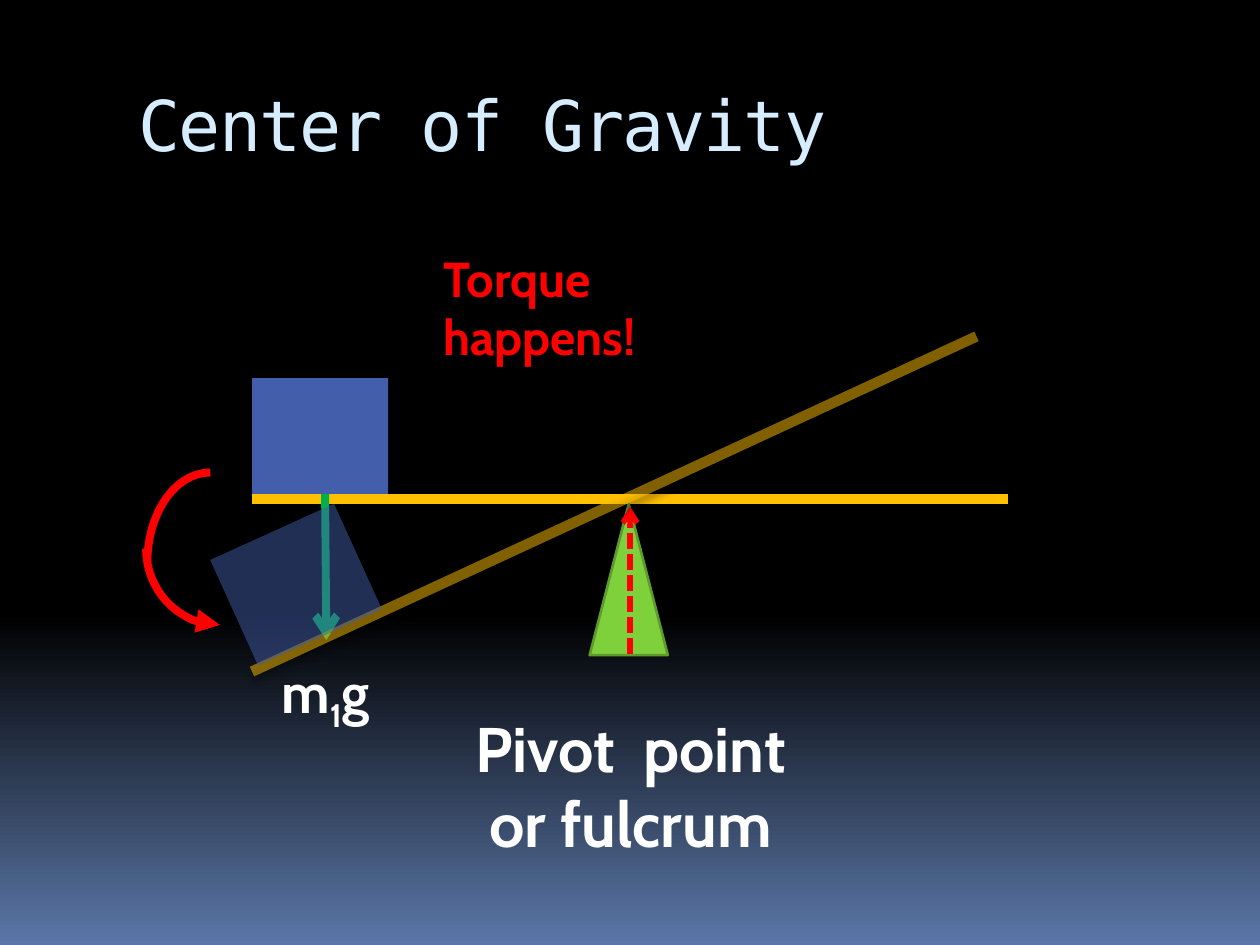
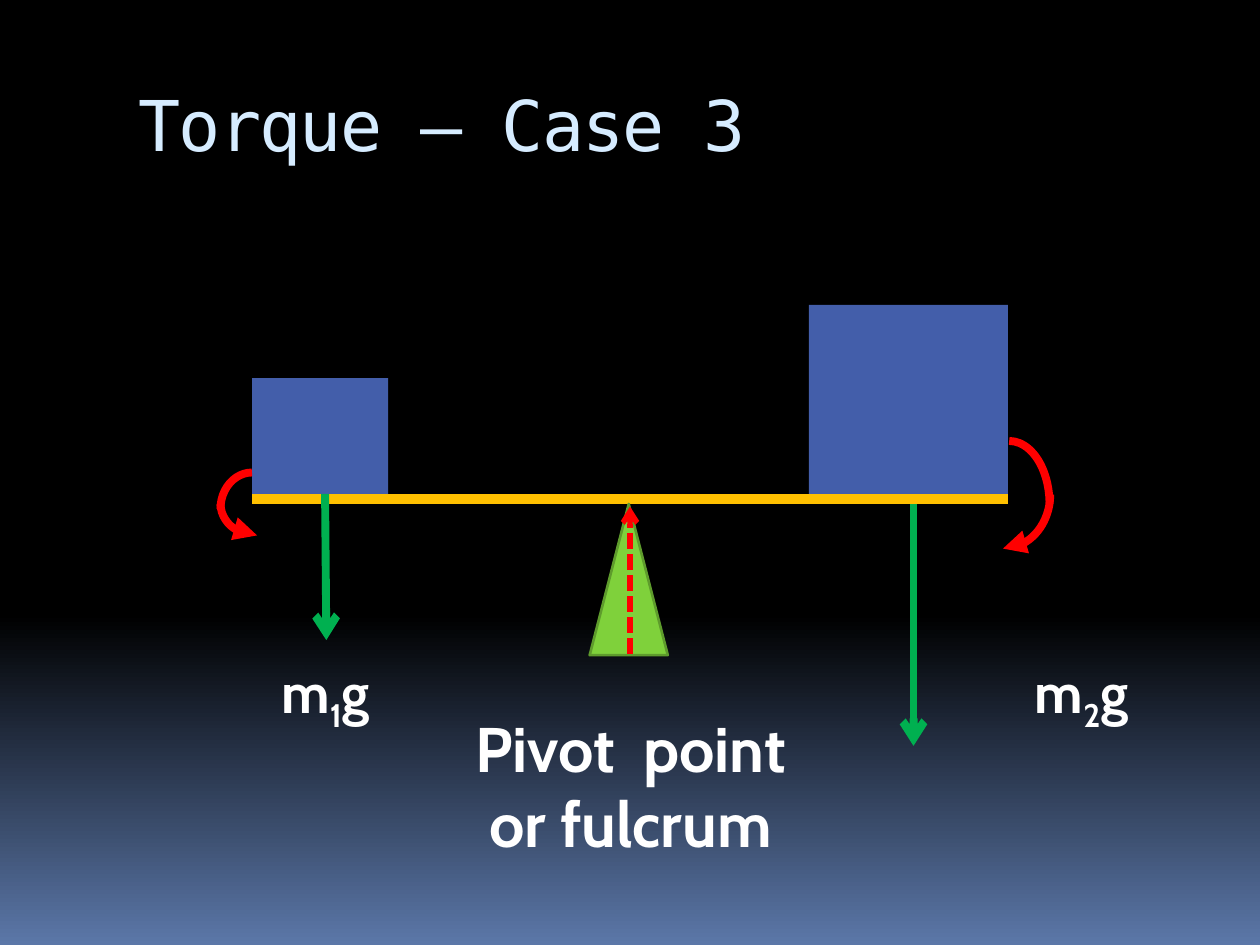
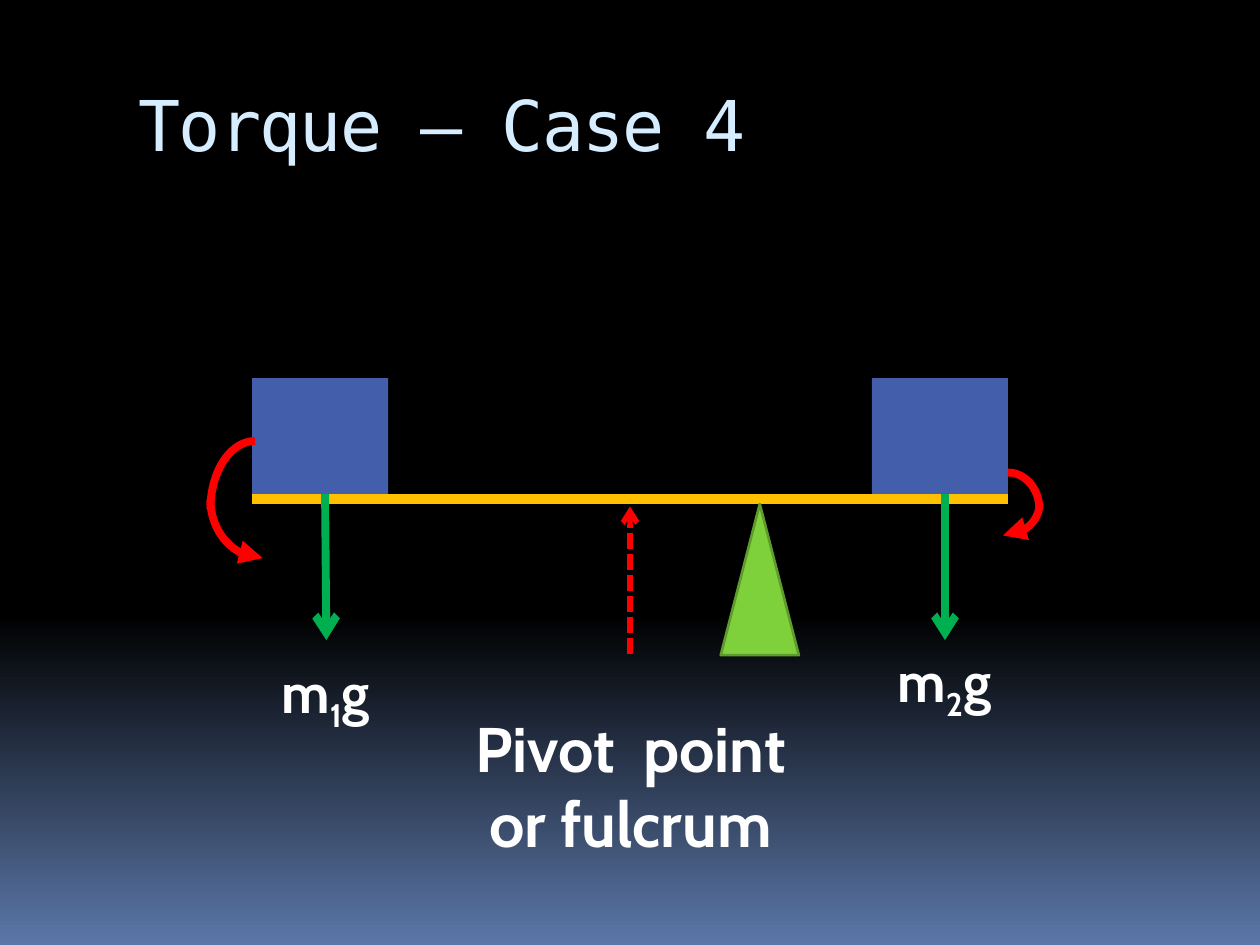
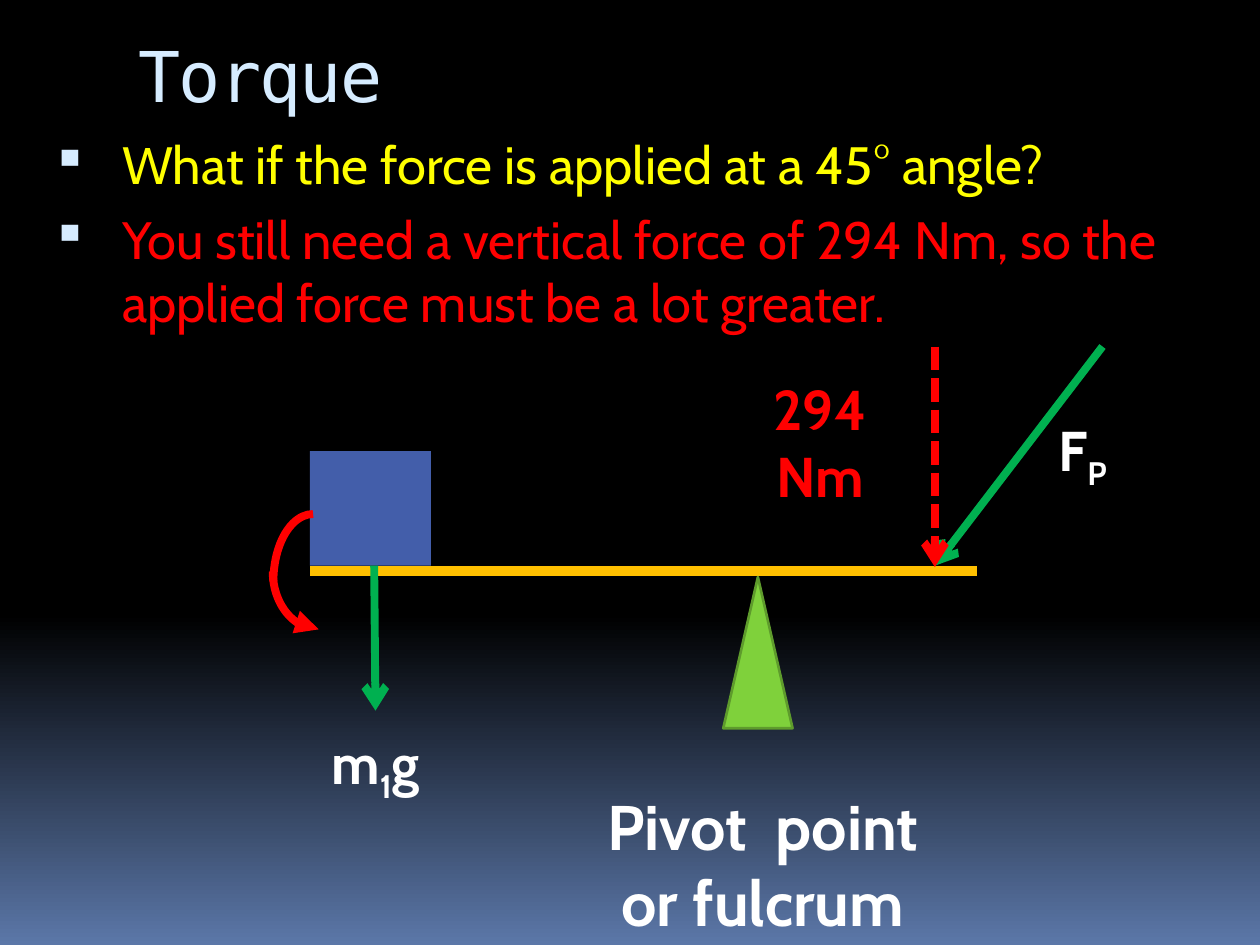
import pptx
import pptx.dml.color
import pptx.enum.dml
import pptx.enum.shapes
import pptx.enum.text
import pptx.oxml
import pptx.oxml.ns
import pptx.util
from pptx.dml.color import RGBColor
from pptx.enum.shapes import MSO_SHAPE
from pptx.util import Inches, Pt

# Shared style
BLACK = RGBColor(0x00, 0x00, 0x00)
DUSK_BLUE = RGBColor(0x5B, 0x77, 0xA8)
TITLE_BLUE = RGBColor(0xD6, 0xEC, 0xFF)
BLOCK_BLUE = RGBColor(0x43, 0x5E, 0xAA)
BOARD_GOLD = RGBColor(0xFF, 0xC0, 0x00)
FORCE_GREEN = RGBColor(0x00, 0xB0, 0x50)
FULCRUM_GREEN = RGBColor(0x7F, 0xD1, 0x3B)
FULCRUM_EDGE = RGBColor(0x5E, 0x9B, 0x2C)
RED = RGBColor(0xFF, 0x00, 0x00)
YELLOW = RGBColor(0xFF, 0xFF, 0x00)
WHITE = RGBColor(0xFF, 0xFF, 0xFF)

TITLE_FONT = "DejaVu Sans Mono"
TEXT_FONT = "Cabin"
BLOCK_SIZE = (1.08, 0.92)
BOARD_TOP = 3.92


# XML helpers
def add_xml(parent, tag, **attributes):
    element = pptx.oxml.parse_xml(f"<a:{tag} {pptx.oxml.ns.nsdecls('a')}/>")
    for name, value in attributes.items():
        element.set(name, str(value))
    parent.append(element)
    return element


def set_alpha(fill_owner, percent):
    for color in fill_owner.iter(pptx.oxml.ns.qn("a:srgbClr")):
        add_xml(color, "alpha", val=percent * 1000)


def add_arrowhead(line, kind):
    add_xml(line._get_or_add_ln(), "tailEnd", type=kind)


# Text
def set_font(paragraph, name, size, color, bold=False):
    font = paragraph.font
    font.name, font.size, font.bold = name, Pt(size), bold
    font.color.rgb = color


def add_text_frame(slide, left, top, width, height):
    box = slide.shapes.add_textbox(Inches(left), Inches(top), Inches(width), Inches(height))
    box.text_frame.word_wrap = True
    return box.text_frame


def add_title(slide, text, top=0.56, height=1):
    frame = add_text_frame(slide, 1, top, 8.5, height)
    frame.margin_top = Inches(0.09)
    paragraph = frame.paragraphs[0]
    run = paragraph.add_run()
    run.text = text
    run._r.get_or_add_rPr().set("spc", "-100")
    set_font(paragraph, TITLE_FONT, 40, TITLE_BLUE)


def add_label(slide, text, left, top, width, height, size=32, color=WHITE, centered=True):
    """Bold label; underscores set off a subscript, as in m_1_g."""
    frame = add_text_frame(slide, left, top, width, height)
    frame.auto_size = pptx.enum.text.MSO_AUTO_SIZE.SHAPE_TO_FIT_TEXT
    paragraph = frame.paragraphs[0]
    if centered:
        paragraph.alignment = pptx.enum.text.PP_ALIGN.CENTER
    for index, part in enumerate(text.split("_")):
        if part:
            run = paragraph.add_run()
            run.text = part
            if index % 2:
                run._r.get_or_add_rPr().set("baseline", "-25000")
    set_font(paragraph, TEXT_FONT, size, color, bold=True)


def add_weight_label(slide, number, left, top, width=1.33):
    add_label(slide, f"m_{number}_g", left, top, width, 0.64)


def add_pivot_label(slide, left=3.42, top=5.58, width=3.17):
    add_label(slide, "Pivot  point or fulcrum", left, top, width, 1.31, size=36)


def add_bullets(slide, items, left, top, width, height):
    frame = add_text_frame(slide, left, top, width, height)
    for index, (text, color) in enumerate(items):
        paragraph = frame.add_paragraph() if index else frame.paragraphs[0]
        paragraph.text = text
        paragraph.space_before = Pt(7)
        set_font(paragraph, TEXT_FONT, 30, color)
        properties = paragraph._p.get_or_add_pPr()
        properties.set("marL", str(Inches(0.7)))
        properties.set("indent", str(-Inches(0.56)))
        default_font = properties.find(pptx.oxml.ns.qn("a:defRPr"))
        bullet_color = add_xml(properties, "buClr")
        add_xml(bullet_color, "srgbClr", val=TITLE_BLUE)
        add_xml(properties, "buSzPct", val=95000)
        add_xml(properties, "buChar", char="▪")
        properties.append(default_font)


# Drawing
def add_line(slide, start, end, color, width, arrow=False, dashed=False):
    connector = slide.shapes.add_connector(
        pptx.enum.shapes.MSO_CONNECTOR.STRAIGHT,
        *(Inches(value) for value in (*start, *end)))
    connector.line.color.rgb = color
    connector.line.width = Pt(width)
    if dashed:
        connector.line.dash_style = pptx.enum.dml.MSO_LINE.SQUARE_DOT
    if arrow:
        add_arrowhead(connector.line, "arrow")
    add_xml(connector._element.spPr, "effectLst")
    return connector


def add_shape(slide, kind, left, top, width, height, fill=None, line=None, line_width=1.5):
    shape = slide.shapes.add_shape(
        kind, Inches(left), Inches(top), Inches(width), Inches(height))
    shape.shadow.inherit = False
    if fill is None:
        shape.fill.background()
    else:
        shape.fill.solid()
        shape.fill.fore_color.rgb = fill
    if line is None:
        shape.line.fill.background()
    else:
        shape.line.color.rgb = line
        shape.line.width = Pt(line_width)
    return shape


def add_block(slide, left, size=BLOCK_SIZE, bottom=BOARD_TOP):
    width, height = size
    return add_shape(slide, MSO_SHAPE.RECTANGLE, left, bottom - height, width, height, BLOCK_BLUE)


def add_board(slide, left=2, right=8, y=3.96):
    add_line(slide, (left, y), (right, y), BOARD_GOLD, 6)


def add_fulcrum(slide, left, top=4, width=0.62):
    add_shape(slide, MSO_SHAPE.ISOSCELES_TRIANGLE, left, top, width, 1.2,
              FULCRUM_GREEN, FULCRUM_EDGE)


def add_force(slide, start, end):
    add_line(slide, start, end, FORCE_GREEN, 4.5, arrow=True)


def add_turn(slide, lower, upper, clockwise=False):
    """Curved torque arrow: a lower quarter with the head, then an upper quarter."""
    for box, rotation in ((lower, 90 if clockwise else 270), (upper, 0)):
        arc = add_shape(slide, MSO_SHAPE.ARC, *box, line=RED, line_width=4.5)
        arc.rotation = rotation
        if not clockwise:
            arc._element.spPr.xfrm.set("flipH", "1")
        if rotation:
            add_arrowhead(arc.line, "triangle")


def add_tilted_board(slide):
    board = add_line(slide, (2, 5.33), (7.75, 2.67), BOARD_GOLD, 6)
    set_alpha(board.line._get_or_add_ln(), 50)
    effects = board._element.spPr.find(pptx.oxml.ns.qn("a:effectLst"))
    shadow = add_xml(effects, "outerShdw", blurRad=Pt(4), dist=Pt(4), dir=90 * 60000)
    add_xml(shadow, "srgbClr", val=BLACK)
    set_alpha(shadow, 50)
    block = add_block(slide, 1.81, bottom=5.1)
    block.rotation = 335.6
    set_alpha(block._element.spPr, 50)


# Slides
def add_slide(presentation):
    return presentation.slides.add_slide(presentation.slide_layouts[6])


def add_seesaw_slide(presentation, title, fulcrum_left=4.68):
    """Level board with the first weight, the fulcrum and the upward force."""
    slide = add_slide(presentation)
    add_title(slide, title)
    add_board(slide)
    add_block(slide, 2)
    add_pivot_label(slide)
    add_force(slide, (2.58, BOARD_TOP), (2.59, 5.08))
    add_weight_label(slide, 1, 1.92, 5.17)
    add_fulcrum(slide, fulcrum_left)
    add_line(slide, (5, 5.19), (5, 4.02), RED, 3, arrow=True, dashed=True)
    return slide


def add_center_of_gravity(presentation):
    slide = add_seesaw_slide(presentation, "Center of Gravity")
    add_tilted_board(slide)
    add_label(slide, "Torque happens!", 3.42, 1.92, 2.25, 1.04,
              size=28, color=RED, centered=False)
    add_turn(slide, (1.14, 3.77, 1.21, 1.17), (1.17, 3.75, 1, 1.42))


def add_case_3(presentation):
    slide = add_seesaw_slide(presentation, "Torque – Case 3")
    add_block(slide, 6.42, (1.58, 1.5))
    add_force(slide, (7.25, 4), (7.25, 5.92))
    add_weight_label(slide, 2, 7.92, 5.17)
    add_turn(slide, (1.79, 3.71, 0.5, 0.58), (1.75, 3.75, 0.5, 0.58))
    add_turn(slide, (7.53, 3.55, 0.86, 0.75), (7.69, 3.5, 0.64, 1), clockwise=True)


def add_case_4(presentation):
    slide = add_seesaw_slide(presentation, "Torque – Case 4", fulcrum_left=5.72)
    add_block(slide, 6.92)
    add_force(slide, (7.5, BOARD_TOP), (7.5, 5.08))
    add_weight_label(slide, 2, 6.83, 5.08)
    add_turn(slide, (1.62, 3.55, 0.93, 0.83), (1.67, 3.5, 0.71, 1.08))
    add_turn(slide, (7.71, 3.71, 0.5, 0.58), (7.75, 3.75, 0.5, 0.58), clockwise=True)


def add_angled_force(presentation):
    slide = add_slide(presentation)
    add_title(slide, "Torque", top=0.17, height=0.92)
    add_bullets(slide, [
        ("What if the force is applied at a 45° angle?", YELLOW),
        ("You still need a vertical force of 294 Nm, so the applied force "
         "must be a lot greater.", RED),
    ], 0.17, 1, 9.58, 5.95)
    add_board(slide, 2.46, 7.75, 4.53)
    add_block(slide, 2.46, (0.96, 0.91), bottom=4.49)
    add_pivot_label(slide, 4.66, 6.2, 2.79)
    add_force(slide, (2.97, 4.49), (2.98, 5.64))
    add_weight_label(slide, 1, 2.39, 5.73, 1.18)
    add_fulcrum(slide, 5.74, 4.58, 0.55)
    add_turn(slide, (2.07, 4.17, 0.92, 0.73), (2.17, 4.08, 0.63, 1.07))
    add_force(slide, (8.75, 2.75), (7.42, 4.49))
    add_label(slide, "F_P", 8, 3.25, 1.18, 0.64)
    add_line(slide, (7.42, 2.75), (7.42, 4.5), RED, 4.5, arrow=True, dashed=True)
    add_label(slide, "294 Nm", 5.92, 2.92, 1.18, 1.18, color=RED)


def set_background(master):
    fill = master.background.fill
    fill.gradient()
    fill.gradient_angle = 270
    for stop, position, color in zip(fill.gradient_stops, (0.65, 1), (BLACK, DUSK_BLUE)):
        stop.position = position
        stop.color.rgb = color


def main():
    presentation = pptx.Presentation()
    presentation.slide_width = Inches(10)
    presentation.slide_height = Inches(7.5)
    set_background(presentation.slide_master)
    add_center_of_gravity(presentation)
    add_case_3(presentation)
    add_case_4(presentation)
    add_angled_force(presentation)
    presentation.save("out.pptx")


if __name__ == "__main__":
    main()
